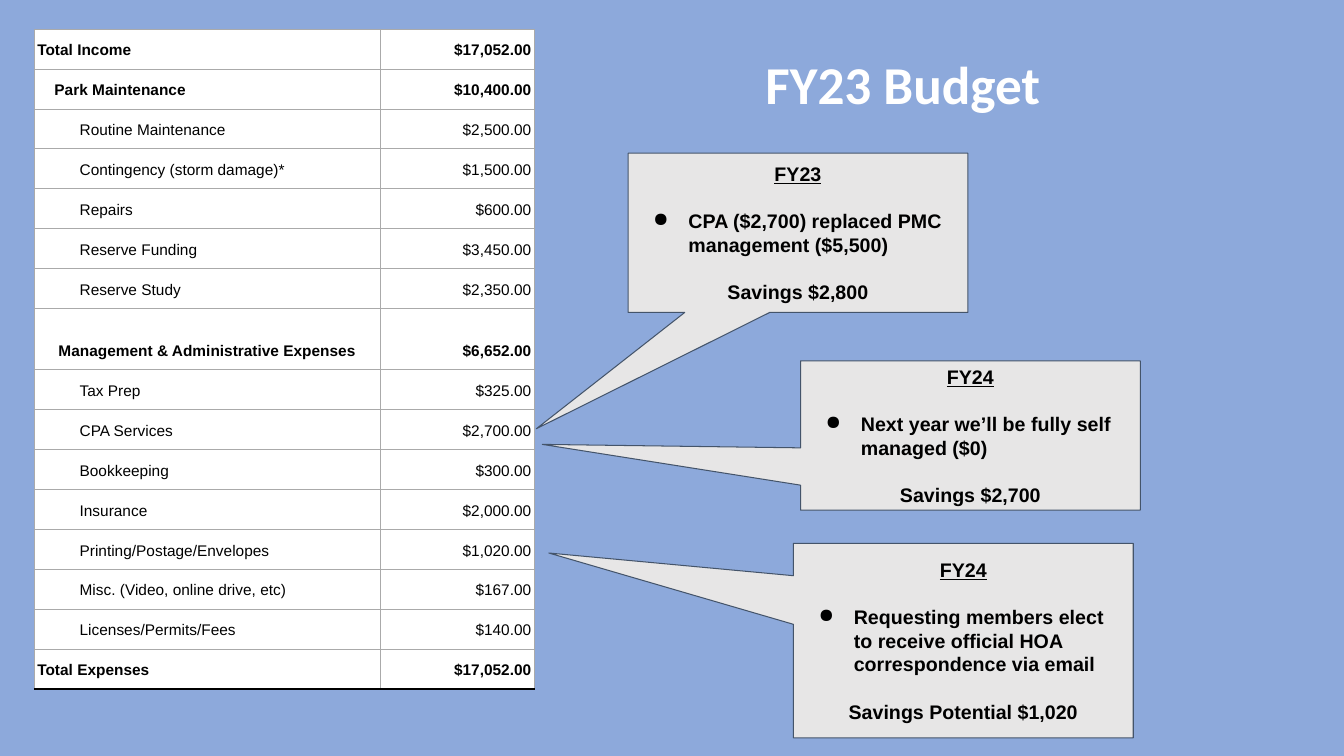
from lxml.etree import SubElement
from pptx import Presentation
from pptx.dml.color import RGBColor
from pptx.enum.shapes import MSO_SHAPE
from pptx.enum.text import MSO_ANCHOR, PP_ALIGN
from pptx.oxml.ns import qn
from pptx.util import Inches, Pt

BACKGROUND = RGBColor(0x8D, 0xA9, 0xDB)
WHITE = RGBColor(0xFF, 0xFF, 0xFF)
BLACK = RGBColor(0x00, 0x00, 0x00)
GRID = RGBColor(0xAA, 0xAA, 0xAA)
CALLOUT_FILL = RGBColor(0xE7, 0xE6, 0xE6)
CALLOUT_LINE = RGBColor(0x44, 0x54, 0x6A)

TOTAL_INDENT, GROUP_INDENT, SUBGROUP_INDENT, ITEM_INDENT = 0, 0.17, 0.21, 0.42

# Label, amount, indent in inches
BUDGET = [
    ("Total Income", "$17,052.00", TOTAL_INDENT),
    ("Park Maintenance", "$10,400.00", GROUP_INDENT),
    ("Routine Maintenance", "$2,500.00", ITEM_INDENT),
    ("Contingency (storm damage)*", "$1,500.00", ITEM_INDENT),
    ("Repairs", "$600.00", ITEM_INDENT),
    ("Reserve Funding", "$3,450.00", ITEM_INDENT),
    ("Reserve Study", "$2,350.00", ITEM_INDENT),
    ("Management & Administrative Expenses", "$6,652.00", SUBGROUP_INDENT),
    ("Tax Prep", "$325.00", ITEM_INDENT),
    ("CPA Services", "$2,700.00", ITEM_INDENT),
    ("Bookkeeping", "$300.00", ITEM_INDENT),
    ("Insurance", "$2,000.00", ITEM_INDENT),
    ("Printing/Postage/Envelopes", "$1,020.00", ITEM_INDENT),
    ("Misc. (Video, online drive, etc)", "$167.00", ITEM_INDENT),
    ("Licenses/Permits/Fees", "$140.00", ITEM_INDENT),
    ("Total Expenses", "$17,052.00", TOTAL_INDENT),
]

# Left, top, height, pointer offsets, year, point, savings
CALLOUTS = [
    (6.23, 1.52, 1.58, (-0.77, 1.23), "FY23",
     "CPA ($2,700) replaced PMC management ($5,500)", "Savings $2,800"),
    (7.94, 3.58, 1.48, (-1.26, 0.06), "FY24",
     "Next year we’ll be fully self managed ($0)", "Savings $2,700"),
    (7.87, 5.39, 1.93, (-1.22, -0.45), "FY24",
     "Requesting members elect to receive official HOA correspondence via email",
     "Savings Potential $1,020"),
]


def set_font(paragraph, size, color, bold, name="Arial"):
    font = paragraph.font
    font.name, font.size, font.bold = name, Pt(size), bold
    font.color.rgb = color


def add_border(cell, side, color, width):
    """Draw one side of a cell: L, R, T or B."""
    line = SubElement(cell._tc.get_or_add_tcPr(), qn(f"a:ln{side}"), w=str(Pt(width)))
    fill = SubElement(line, qn("a:solidFill"))
    SubElement(fill, qn("a:srgbClr"), val=str(color))


def add_bullet(paragraph):
    properties = paragraph._p.get_or_add_pPr()
    properties.set("marL", str(Inches(0.5)))
    properties.set("indent", str(Inches(-0.35)))
    SubElement(properties, qn("a:buChar"), char="●")


def add_title(slide, text):
    title = slide.shapes.title
    title.left, title.top = Inches(6.36), Inches(0.41)
    title.width, title.height = Inches(5.19), Inches(0.84)
    frame = title.text_frame
    frame.text = text
    frame.vertical_anchor = MSO_ANCHOR.TOP
    frame.margin_top = frame.margin_bottom = Inches(0.1)
    paragraph = frame.paragraphs[0]
    paragraph.alignment = PP_ALIGN.CENTER
    set_font(paragraph, 38, WHITE, True, "Calibri")


def fill_cell(cell, text, bold, indent, alignment, is_last):
    cell.text = text
    cell.vertical_anchor = MSO_ANCHOR.BOTTOM
    cell.margin_left, cell.margin_right = Inches(0.03 + indent), Inches(0.03)
    cell.margin_top = cell.margin_bottom = Inches(0.1)
    for side in "LRT":
        add_border(cell, side, GRID, 0.75)
    add_border(cell, "B", BLACK if is_last else GRID, 1.5 if is_last else 0.75)
    cell.fill.solid()
    cell.fill.fore_color.rgb = WHITE
    paragraph = cell.text_frame.paragraphs[0]
    paragraph.alignment = alignment
    paragraph.line_spacing = 1.15
    set_font(paragraph, 11, BLACK, bold)


def add_budget_table(slide):
    heights = [0.61 if indent == SUBGROUP_INDENT else 0.39 for _, _, indent in BUDGET]
    frame = slide.shapes.add_table(len(BUDGET), 2, Inches(0.34), Inches(0.29),
                                   Inches(4.96), Inches(sum(heights)))
    table = frame.table
    table.first_row = table.horz_banding = False
    table.columns[0].width, table.columns[1].width = Inches(3.43), Inches(1.53)
    for index, (label, amount, indent) in enumerate(BUDGET):
        table.rows[index].height = Inches(heights[index])
        bold = indent != ITEM_INDENT
        is_last = index == len(BUDGET) - 1
        fill_cell(table.cell(index, 0), label, bold, indent, PP_ALIGN.LEFT, is_last)
        fill_cell(table.cell(index, 1), amount, bold, 0, PP_ALIGN.RIGHT, is_last)


def add_callout(slide, left, top, height, pointer, year, point, savings):
    shape = slide.shapes.add_shape(MSO_SHAPE.RECTANGULAR_CALLOUT, Inches(left),
                                   Inches(top), Inches(3.37), Inches(height))
    shape.adjustments[0], shape.adjustments[1] = pointer
    shape.shadow.inherit = False
    shape.fill.solid()
    shape.fill.fore_color.rgb = CALLOUT_FILL
    shape.line.color.rgb = CALLOUT_LINE
    shape.line.width = Pt(0.75)

    frame = shape.text_frame
    frame.word_wrap = True
    frame.vertical_anchor = MSO_ANCHOR.MIDDLE
    frame.margin_left = frame.margin_right = Inches(0.1)
    frame.margin_top = frame.margin_bottom = Inches(0.1)
    frame.text = "\n".join([year, point, savings])
    heading, bullet, total = frame.paragraphs
    for paragraph in frame.paragraphs:
        paragraph.alignment = PP_ALIGN.CENTER
        set_font(paragraph, 14, BLACK, paragraph is not bullet)
    heading.font.underline = True
    bullet.alignment = PP_ALIGN.LEFT
    bullet.space_before = total.space_before = Pt(17)
    add_bullet(bullet)


def main():
    presentation = Presentation()
    presentation.slide_width, presentation.slide_height = Inches(13.33), Inches(7.5)
    slide = presentation.slides.add_slide(presentation.slide_layouts[5])
    slide.background.fill.solid()
    slide.background.fill.fore_color.rgb = BACKGROUND
    add_title(slide, "FY23 Budget")
    add_budget_table(slide)
    for callout in CALLOUTS:
        add_callout(slide, *callout)
    presentation.save("out.pptx")


if __name__ == "__main__":
    main()
